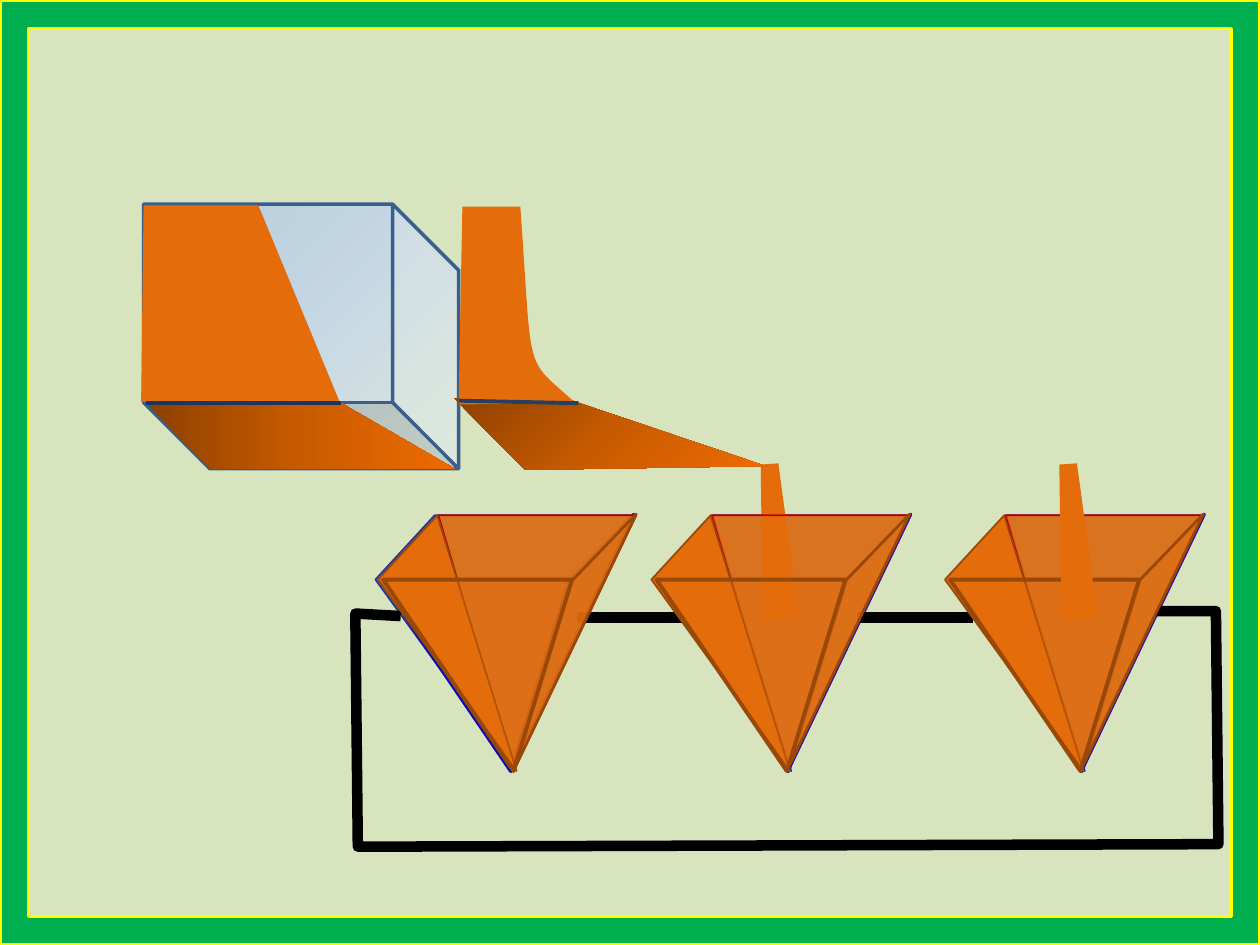
from lxml import etree
from pptx import Presentation
from pptx.dml.color import RGBColor
from pptx.enum.shapes import MSO_CONNECTOR, MSO_SHAPE
from pptx.oxml.ns import qn
from pptx.util import Inches, Pt

STRAIGHT = MSO_CONNECTOR.STRAIGHT
CUBE = MSO_SHAPE.CUBE
FRAME = MSO_SHAPE.FRAME
TRIANGLE = MSO_SHAPE.ISOSCELES_TRIANGLE

COLORS = {
    "background": "D7E4BD", "green": "00B050", "yellow": "FFFF00", "black": "000000",
    "orange": "E46C0A", "brown": "984807", "red": "C00000",
    "cube edge": "3A5F8C", "surface": "17375E", "pour edge": "254061",
    "sky": "74BCFE", "blue": "558ED5", "violet": "2A14AC", "indigo": "2D3295", "navy": "0808BA",
    "glass dark": "98B9F6", "glass": "C0D3F8", "glass light": "E0E9FB",
    "side dark": "3F709D", "side": "599FDF", "side light": "73BCFF",
    "liquid dark": "8D4000", "liquid": "C85B00", "liquid light": "EE6B00",
}
GLASS = ([("glass dark", 48), ("glass", 69), ("glass light", 51)], 315)
BLUE_SIDE = ([("side dark", 100), ("side", 100), ("side light", 100)], 135)
LIQUID = [("liquid dark", 100), ("liquid", 100), ("liquid light", 100)]
ORANGE = ([("orange", 100)], 0)
BLUE_STYLE = ("sky", "blue", BLUE_SIDE, ("violet", "indigo", "violet", "navy"))
ORANGE_STYLE = ("orange", "orange", ORANGE, ("red", "brown", "brown", "brown"))

presentation = Presentation()
presentation.slide_width = Inches(10)
presentation.slide_height = Inches(7.5)
COLUMN = presentation.slide_width / 10
ROW = presentation.slide_height / 7.5
slide = presentation.slides.add_slide(presentation.slide_layouts[6])
slide.background.fill.solid()
slide.background.fill.fore_color.rgb = RGBColor.from_string(COLORS["background"])


def draw(shapes, geometry, places, fill=None, line=None, width=1, rotation=0, adjust=None, close=True):
    if geometry is None:
        points = [(round(x * COLUMN), round(y * ROW)) for x, y in places]
        builder = shapes.build_freeform(*points[0])
        builder.add_line_segments(points[1:], close=close)
        shape = builder.convert_to_shape()
    else:
        box = [round(place * unit) for place, unit in zip(places, (COLUMN, ROW) * 2)]
        add = shapes.add_connector if geometry is STRAIGHT else shapes.add_shape
        shape = add(geometry, *box)
    if line:
        shape.line.color.rgb = RGBColor.from_string(COLORS[line])
        shape.line.width = Pt(width)
    else:
        shape.line.fill.background()
    properties = shape._element.spPr
    if geometry is STRAIGHT:
        etree.SubElement(properties, qn("a:effectLst"))
        return
    shape.shadow.inherit = False
    shape.rotation = rotation
    if adjust is not None:
        shape.adjustments[0] = adjust
    if fill is None:
        shape.fill.background()
        return
    stops, angle = fill
    if len(stops) == 1:
        shape.fill.solid()
        parents = [properties.find(qn("a:solidFill"))]
    else:
        shape.fill.gradient()
        gradient = properties.find(qn("a:gradFill"))
        gradient.find(qn("a:lin")).set("ang", str(angle * 60000))
        stop_list = gradient.find(qn("a:gsLst"))
        stop_list.clear()
        step = 100000 // (len(stops) - 1)
        parents = [etree.SubElement(stop_list, qn("a:gs"), pos=str(index * step))
                   for index in range(len(stops))]
    for parent, (color, opacity) in zip(parents, stops):
        for child in list(parent):
            parent.remove(child)
        node = etree.SubElement(parent, qn("a:srgbClr"), val=COLORS[color])
        if opacity < 100:
            etree.SubElement(node, qn("a:alpha"), val=str(opacity * 1000))


def draw_pyramid(shapes, left, style):
    back, front, side, edges = style
    draw(shapes, TRIANGLE, (left + 0.48, 4.09, 1.57, 2.03), ([(back, 91)], 0), edges[0], 1, 180, 0.62)
    draw(shapes, None, [(left + 0.47, 4.09), (left, 4.6), (left + 1.1, 6.12)], side, edges[1], 1)
    draw(shapes, None, [(left + 2.05, 4.08), (left + 1.54, 4.61), (left + 1.08, 6.11)],
         ([(front, 23)], 0), edges[2], 1.5)
    draw(shapes, TRIANGLE, (left + 0.04, 4.6, 1.5, 1.52), ([(front, 35)], 0), edges[3], 2.25, 180, 0.31)


draw(slide.shapes, CUBE, (1.34, 1.42, 2.1, 2.5), GLASS, "cube edge", 2, 90)

rack = slide.shapes.add_group_shape().shapes
for left in (2.98, 5.18, 7.51):
    draw_pyramid(rack, left, BLUE_STYLE)
draw(rack, None, [(3.18, 4.89), (2.82, 4.87), (2.84, 6.72), (9.67, 6.7), (9.65, 4.85), (9.18, 4.85)],
     line="black", width=6, close=False)
for start, end in ((6.8, 7.72), (4.58, 5.41)):
    draw(rack, STRAIGHT, (start, 4.9, end, 4.9), line="black", width=6)

draw(slide.shapes, FRAME, (0, 0, 10, 7.5), ([("green", 100)], 0), "yellow", 2, adjust=0.03)

STREAM = [(0, 0), (0.08, 1.23), (0.22, 1.23), (0.29, 0)]
for pyramid_lefts, stream_left in (((3,), 6.01), ((5.17, 7.5), 8.38)):
    for left in pyramid_lefts:
        draw_pyramid(slide.shapes.add_group_shape().shapes, left, ORANGE_STYLE)
    draw(slide.shapes, None, [(stream_left + x, 3.68 + y) for x, y in STREAM], ORANGE, rotation=176)

tank = slide.shapes.add_group_shape().shapes
draw(tank, None, [(2.05, 1.63), (2.7, 3.2), (1.12, 3.19), (1.14, 1.63)], ORANGE)
draw(tank, None, [(1.16, 3.2), (2.71, 3.2), (3.61, 3.72), (1.67, 3.72)], (LIQUID, 0))
draw(tank, STRAIGHT, (1.16, 3.2, 2.71, 3.2), line="surface", width=2.25)

CURVE = [(4.13, 1.64), (4.23, 3.02), (4.15, 2.82), (4.57, 3.2)]
STEPS = 24
curve_points = []
for step in range(STEPS + 1):
    t = step / STEPS
    weights = ((1 - t) ** 3, 3 * t * (1 - t) ** 2, 3 * t ** 2 * (1 - t), t ** 3)
    curve_points.append([sum(weight * value for weight, value in zip(weights, values))
                         for values in zip(*CURVE)])

pour = slide.shapes.add_group_shape().shapes
draw(pour, None, [(4.54, 3.18), (6.08, 3.7), (4.17, 3.73), (3.6, 3.16)], (LIQUID, 45))
draw(pour, None, curve_points + [(3.64, 3.21), (3.67, 1.64)], ORANGE)
draw(pour, STRAIGHT, (3.64, 3.18, 4.59, 3.2), line="pour edge", width=2.25)

presentation.save("out.pptx")
